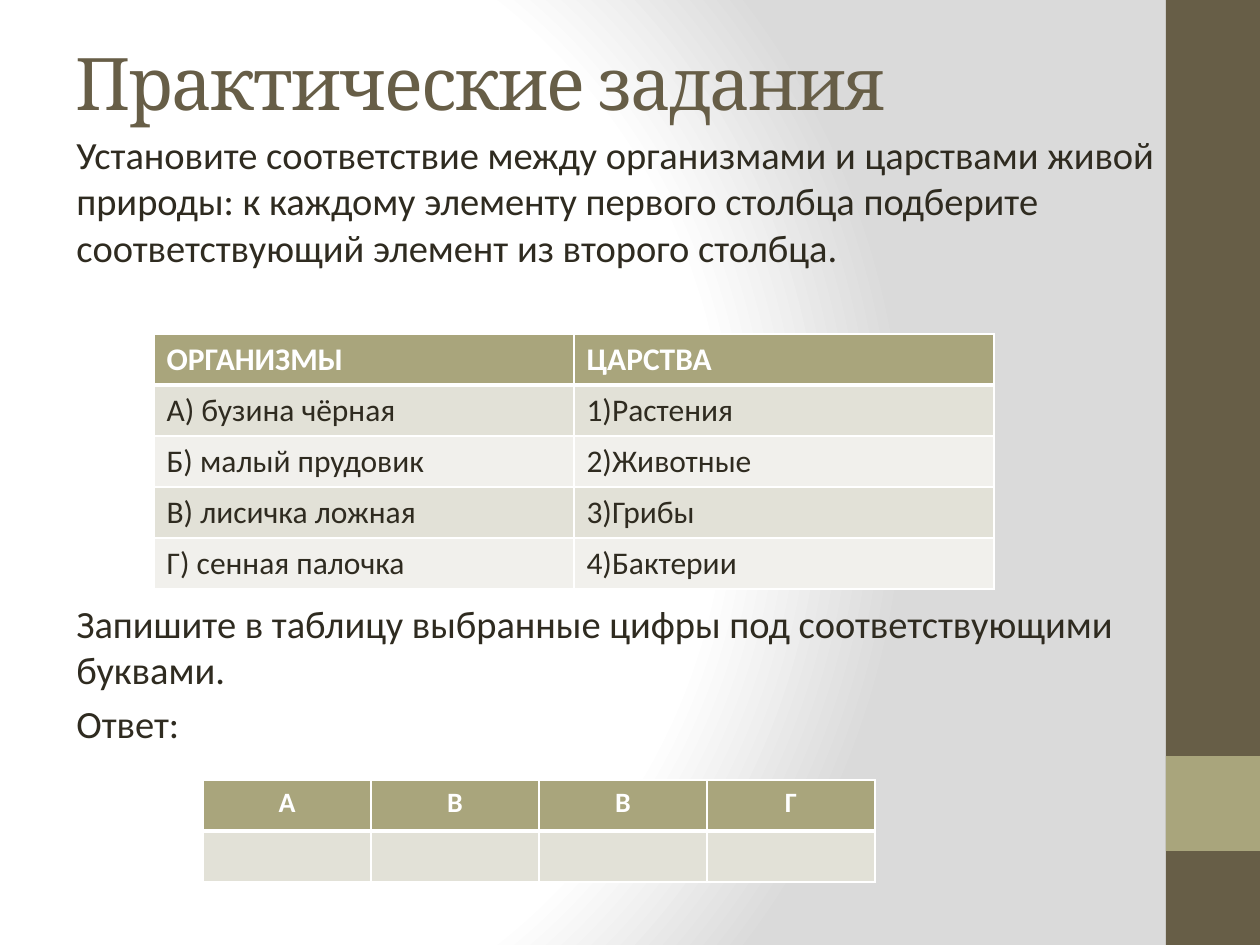
"""Build the slide with practical tasks on the kingdoms of living nature."""
from lxml.etree import SubElement
from pptx import Presentation
from pptx.dml.color import RGBColor
from pptx.enum.shapes import MSO_SHAPE as Shape
from pptx.enum.text import MSO_ANCHOR as Anchor, MSO_AUTO_SIZE as AutoSize, PP_ALIGN as Align
from pptx.oxml import parse_xml
from pptx.oxml.ns import nsdecls, qn
from pptx.util import Pt

PX = 914400 / 126
COLORS = {
    "brown": "675E47", "olive": "A9A57C", "text": "2F2B20", "white": "FFFFFF",
    "band": "E2E1D7", "light": "F1F0EC", "grey": "DADADA",
}


def add_text(para, text, size, color, font="Calibri", bold=False):
    """Add one formatted run to a paragraph."""
    span = para.add_run()
    span.text = text
    span.font.name, span.font.size, span.font.bold = font, Pt(size), bold
    span.font.color.rgb = RGBColor.from_string(COLORS[color])
    return span


def add_grid(page, place, rows, size, align):
    """Add a banded table with a header row and white borders."""
    left, top, width, height = [round(value * PX) for value in place]
    table = page.shapes.add_table(len(rows), len(rows[0]), left, top, width, height).table
    for r, row in enumerate(rows):
        fill = "olive" if r == 0 else ("band" if r % 2 else "light")
        for c, text in enumerate(row):
            cell = table.cell(r, c)
            props = cell._tc.get_or_add_tcPr()
            widths = {"lnL": 1, "lnR": 1, "lnT": 3 if r == 1 else 1, "lnB": 3 if r == 0 else 1}
            for side, points in widths.items():
                line = SubElement(props, qn(f"a:{side}"), w=str(Pt(points)))
                SubElement(SubElement(line, qn("a:solidFill")), qn("a:srgbClr"), val=COLORS["white"])
            cell.fill.solid()
            cell.fill.fore_color.rgb = RGBColor.from_string(COLORS[fill])
            para = cell.text_frame.paragraphs[0]
            para.alignment = align
            if text:
                add_text(para, text, size, "text" if r else "white", bold=r == 0)


deck = Presentation()
deck.slide_width, deck.slide_height = round(1260 * PX), round(945 * PX)
page = deck.slides.add_slide(deck.slide_layouts[5])

page.background.fill.solid()
backdrop = page._element.cSld.find(qn("p:bg")).find(qn("p:bgPr"))
stops = "".join(
    f'<a:gs pos="{place * 1000}"><a:srgbClr val="{COLORS[name]}"/></a:gs>'
    for place, name in [(0, "white"), (75, "white"), (100, "grey")]
)
backdrop.replace(backdrop[0], parse_xml(
    f'<a:gradFill {nsdecls("a")} rotWithShape="1"><a:gsLst>{stops}</a:gsLst><a:path path="circle">'
    '<a:fillToRect l="20000" t="50000" r="100000" b="50000"/></a:path></a:gradFill>'
))

for color, top, height in [("brown", 0, 945), ("olive", 756, 95)]:
    bar = page.shapes.add_shape(
        Shape.RECTANGLE, round(1166 * PX), round(top * PX), round(94 * PX), round(height * PX))
    bar.shadow.inherit = False
    bar.fill.solid()
    bar.fill.fore_color.rgb = RGBColor.from_string(COLORS[color])
    bar.line.fill.background()

title = page.shapes.title
title.left, title.top, title.width, title.height = [round(v * PX) for v in (63, 38, 1134, 87)]
title.text_frame.auto_size = AutoSize.NONE
title.text_frame.vertical_anchor = Anchor.MIDDLE
heading = title.text_frame.paragraphs[0]
heading.alignment = Align.LEFT
span = add_text(heading, "Практические задания", 41.4, "brown", "Cambria")
span.font._element.set("spc", "-100")

box = page.shapes.add_textbox(*[round(v * PX) for v in (64, 125, 1134, 733)])
frame = box.text_frame
frame.word_wrap = True
tasks = [
    ("Установите соответствие между организмами и царствами живой природы: "
     "к каждому элементу первого столбца подберите соответствующий элемент из второго столбца.", 4.4),
    ("Запишите в таблицу выбранные цифры под соответствующими буквами.", 188.6),
    ("Ответ:", 4.4),
]
for i, (text, gap) in enumerate(tasks):
    para = frame.add_paragraph() if i else frame.paragraphs[0]
    para.space_before = Pt(gap)
    add_text(para, text, 22, "text")

pairs = [
    ("ОРГАНИЗМЫ", "ЦАРСТВА"),
    ("А) бузина чёрная", "1)Растения"),
    ("Б) малый прудовик", "2)Животные"),
    ("В) лисичка ложная", "3)Грибы"),
    ("Г) сенная палочка", "4)Бактерии"),
]
add_grid(page, (154, 334, 840, 255), pairs, 18, Align.LEFT)
add_grid(page, (203, 780, 672, 102), ["АВВГ", [""] * 4], 16, Align.CENTER)

deck.save("out.pptx")
